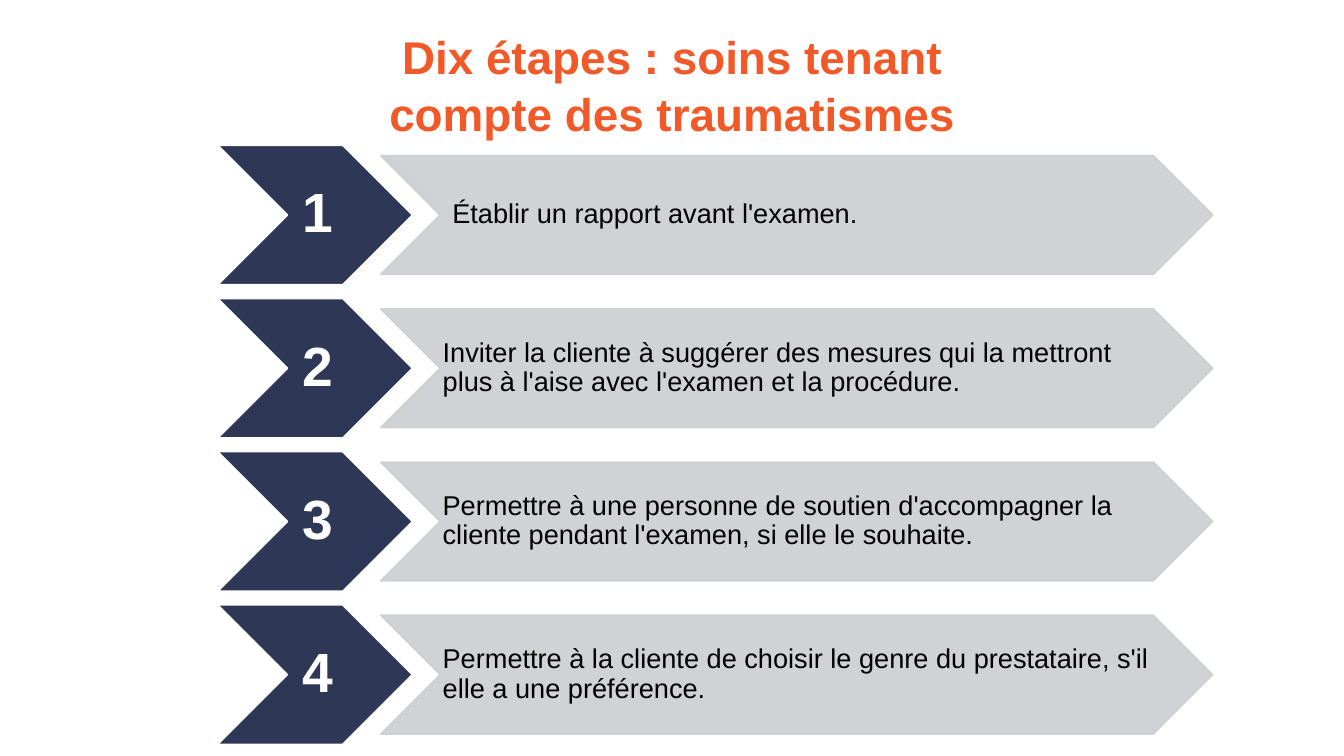
from lxml.etree import SubElement
from pptx import Presentation
from pptx.dml.color import RGBColor
from pptx.enum.shapes import MSO_SHAPE as Shape
from pptx.enum.text import MSO_ANCHOR as Anchor, PP_ALIGN as Align
from pptx.oxml.ns import qn
from pptx.util import Pt

# Content: each step with the left inset of its text
TITLE = "Dix étapes\u00a0: soins tenant compte des traumatismes"
STEPS = [
    ("Établir un rapport avant l'examen.", 14.4),
    ("Inviter la cliente à suggérer des mesures qui la mettront "
     "plus à l'aise avec l'examen et la procédure.", 3),
    ("Permettre à une personne de soutien d'accompagner la cliente "
     "pendant l'examen, si elle le souhaite.", 3),
    ("Permettre à la cliente de choisir le genre du prestataire, "
     "s'il elle a une préférence.", 3),
]

# Colours and layout, in points
ORANGE, NAVY, GREY, WHITE, BLACK = "F15928", "2E3856", "CDCED1", "FFFFFF", "000000"
SLIDE_WIDTH, SLIDE_HEIGHT = 1583.28, 890.64
TITLE_BOX = (379.5, 30.2, 824.4, 140.4)
FIRST_CENTRE, ROW_PITCH = 253.3, 180.5
NUMBER_LEFT, NUMBER_WIDTH, NUMBER_HEIGHT = 256.3, 229.7, 164.5
BAR_LEFT, BAR_WIDTH, BAR_HEIGHT = 448.6, 979.9, 139.7


def color(hex_code):
    return RGBColor.from_string(hex_code)


def write(shape, text, size, font_color, bold=False, align=Align.LEFT,
          anchor=Anchor.MIDDLE, spacing=0.9, insets=(0, 0, 0, 0)):
    frame = shape.text_frame
    frame.word_wrap = True
    frame.vertical_anchor = anchor
    (frame.margin_left, frame.margin_top,
     frame.margin_right, frame.margin_bottom) = [Pt(inset) for inset in insets]
    frame.text = text
    paragraph = frame.paragraphs[0]
    paragraph.alignment = align
    paragraph.line_spacing = spacing
    font = paragraph.runs[0].font
    font.name, font.size, font.bold = "Arial", Pt(size), bold
    font.color.rgb = color(font_color)


def add_chevron(slide, left, centre, width, height, fill, line, opacity=100):
    shape = slide.shapes.add_shape(
        Shape.CHEVRON, Pt(left), Pt(centre - height / 2), Pt(width), Pt(height))
    shape.shadow.inherit = False
    shape.fill.solid()
    shape.fill.fore_color.rgb = color(fill)
    shape.line.color.rgb = color(line)
    shape.line.width = Pt(2)
    if opacity < 100:
        for rgb in shape.element.spPr.iter(qn("a:srgbClr")):
            SubElement(rgb, qn("a:alpha"), val=str(opacity * 1000))
    return shape


def main():
    presentation = Presentation()
    presentation.slide_width, presentation.slide_height = Pt(SLIDE_WIDTH), Pt(SLIDE_HEIGHT)
    slide = presentation.slides.add_slide(presentation.slide_layouts[0])

    # Title, without the layout's subtitle
    subtitle = slide.placeholders[1].element
    subtitle.getparent().remove(subtitle)
    title = slide.shapes.title
    title.left, title.top, title.width, title.height = [Pt(value) for value in TITLE_BOX]
    write(title, TITLE, 54, ORANGE, bold=True, align=Align.CENTER,
          anchor=Anchor.TOP, spacing=1.05)

    # One numbered chevron and one text chevron per step
    for index, (step, inset) in enumerate(STEPS):
        centre = FIRST_CENTRE + index * ROW_PITCH
        number = add_chevron(slide, NUMBER_LEFT, centre, NUMBER_WIDTH, NUMBER_HEIGHT,
                             NAVY, WHITE)
        write(number, str(index + 1), 65, WHITE, bold=True, align=Align.CENTER,
              insets=(6.5, 3.6, 0, 3.6))
        bar = add_chevron(slide, BAR_LEFT, centre, BAR_WIDTH, BAR_HEIGHT,
                          GREY, GREY, opacity=90)
        write(bar, step, 32, BLACK, insets=(inset, 1.5, 0, 1.5))

    presentation.save("out.pptx")


if __name__ == "__main__":
    main()
